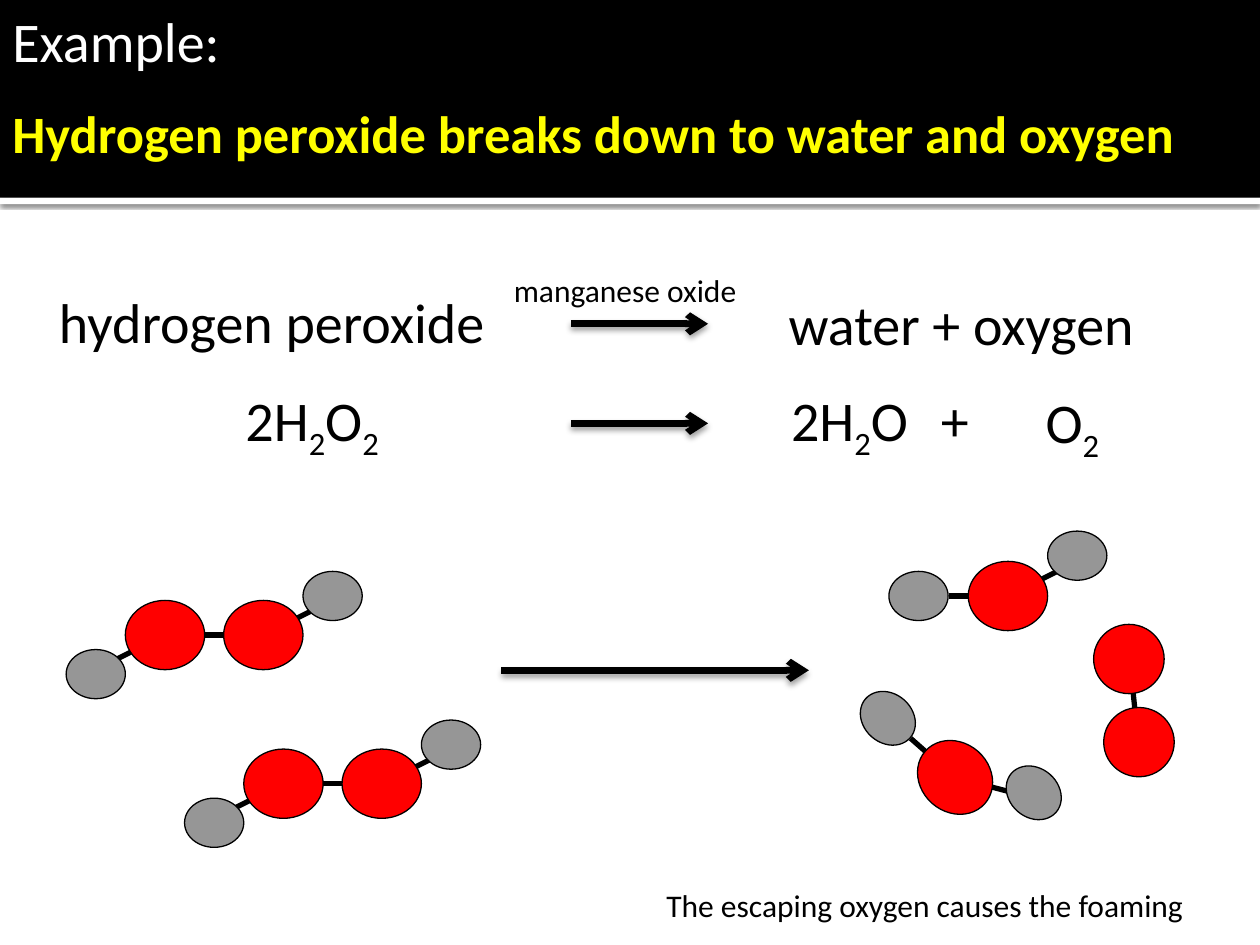
from math import cos, radians, sin

from lxml.etree import SubElement
from pptx import Presentation
from pptx.dml.color import RGBColor
from pptx.enum.shapes import MSO_CONNECTOR, MSO_SHAPE
from pptx.oxml.ns import qn
from pptx.util import Inches, Pt

COLORS = {
    "black": "000000",
    "white": "FFFFFF",
    "title": "FFFF00",
    "oxygen": "FF0000",
    "hydrogen": "969696",
}
ATOM_SIZES = {"oxygen": (0.63, 0.55), "hydrogen": (0.47, 0.39)}

# Atoms are (element, x, y) and bonds (x1, y1, x2, y2), in inches from the centre.
PEROXIDE = (
    [("oxygen", -0.39, 0), ("oxygen", 0.39, 0),
     ("hydrogen", 0.94, -0.31), ("hydrogen", -0.94, 0.31)],
    [(-0.08, 0, 0.08, 0), (0.63, -0.12, 0.79, -0.2), (-0.63, 0.12, -0.79, 0.2)],
)
WATER = (
    [("oxygen", 0, 0), ("hydrogen", -0.71, 0), ("hydrogen", 0.55, -0.32)],
    [(-0.47, 0, -0.31, 0), (0.24, -0.12, 0.4, -0.2)],
)
OXYGEN_GAS = (
    [("oxygen", 0.04, 0.33), ("oxygen", -0.04, -0.33)],
    [(-0.02, -0.19, 0.02, 0.19)],
)


def color(name):
    return RGBColor.from_string(COLORS[name])


def set_effects(shape, shadow=None):
    """Give a shape a downward shadow (alpha %, blur pt, distance pt), or none."""
    effects = SubElement(shape._element.spPr, qn("a:effectLst"))
    if shadow:
        alpha, blur, distance = shadow
        outer = SubElement(effects, qn("a:outerShdw"), blurRad=str(Pt(blur)),
                           dist=str(Pt(distance)), dir="5400000", rotWithShape="0")
        tint = SubElement(outer, qn("a:srgbClr"), val=COLORS["black"])
        SubElement(tint, qn("a:alpha"), val=str(alpha * 1000))


def add_line(shapes, start, end, width):
    ends = [Inches(value) for value in (*start, *end)]
    line = shapes.add_connector(MSO_CONNECTOR.STRAIGHT, *ends)
    line.line.color.rgb = color("black")
    line.line.width = Pt(width)
    return line


def add_arrow(page, left, top, length):
    arrow = add_line(page.shapes, (left, top), (left + length, top), 3.78)
    SubElement(arrow.line._get_or_add_ln(), qn("a:tailEnd"), type="arrow")
    set_effects(arrow, (38, 3.5, 2))


def add_text(page, text, box, size=32, tone="black", bold=False, wrap=False):
    """Add one line of text; a digit after an underscore is a subscript."""
    frame = page.shapes.add_textbox(*map(Inches, box)).text_frame
    frame.word_wrap = wrap
    para = frame.paragraphs[0]
    para.font.name = "Calibri"
    para.font.size = Pt(size)
    para.font.bold = bold
    para.font.color.rgb = color(tone)
    first, *rest = text.split("_")
    para.add_run().text = first
    for part in rest:
        span = para.add_run()
        span.text = part[0]
        span.font._element.set("baseline", "-25000")
        if part[1:]:
            para.add_run().text = part[1:]


def add_band(page, top, height, tone, shadow=None):
    band = page.shapes.add_shape(
        MSO_SHAPE.RECTANGLE, 0, Inches(top), Inches(10), Inches(height))
    band.fill.solid()
    band.fill.fore_color.rgb = color(tone)
    band.line.fill.background()
    set_effects(band, shadow)


def add_molecule(page, molecule, x, y, turn=0, oxygen_size=ATOM_SIZES["oxygen"]):
    """Draw a molecule centred on x, y and turned clockwise by some degrees."""
    atoms, bonds = molecule
    sizes = {**ATOM_SIZES, "oxygen": oxygen_size}
    cosine, sine = cos(radians(turn)), sin(radians(turn))

    def place(dx, dy):
        return x + dx * cosine - dy * sine, y + dx * sine + dy * cosine

    group = page.shapes.add_group_shape()
    for x1, y1, x2, y2 in bonds:
        set_effects(add_line(group.shapes, place(x1, y1), place(x2, y2), 3))
    for element, dx, dy in atoms:
        width, height = sizes[element]
        center_x, center_y = place(dx, dy)
        box = (center_x - width / 2, center_y - height / 2, width, height)
        atom = group.shapes.add_shape(MSO_SHAPE.OVAL, *map(Inches, box))
        atom.rotation = turn
        atom.fill.solid()
        atom.fill.fore_color.rgb = color(element)
        atom.line.color.rgb = color("black")
        atom.line.width = Pt(0.75)
        atom.shadow.inherit = False


def add_header(page):
    add_band(page, 1.57, 0.05, "white", (60, 2.5, 0.8))
    add_band(page, 0, 1.57, "black")
    add_text(page, "Example:", (0, 0, 10, 0.64), tone="white", wrap=True)
    add_text(page, "Hydrogen peroxide breaks down to water and oxygen",
             (0, 0.75, 9.96, 0.61), 30, "title", bold=True, wrap=True)


def add_equations(page, left, top):
    """Place the word equation above the symbol equation."""
    add_text(page, "hydrogen peroxide", (left, top - 0.02, 3.6, 0.63))
    add_text(page, "manganese oxide", (left + 3.61, top - 0.15, 2.17, 0.4), 18)
    add_text(page, "water + oxygen", (left + 5.79, top, 3.22, 0.63))
    symbols = [("2H_2O_2", 1.48, 1.44), ("2H_2O", 5.81, 1.28), ("+", 7, 0.46)]
    for text, offset, width in symbols:
        add_text(page, text, (left + offset, top + 0.76, width, 0.63))
    add_text(page, "O_2", (left + 7.83, top + 0.78, 0.71, 0.63))
    for offset in (0.32, 1.11):
        add_arrow(page, left + 4.16, top + offset, 1.09)


def add_reaction(page):
    add_molecule(page, PEROXIDE, 1.7, 5.04)
    add_molecule(page, PEROXIDE, 2.64, 6.22)
    add_arrow(page, 3.98, 5.32, 2.44)
    add_molecule(page, WATER, 8, 4.73)
    add_molecule(page, WATER, 7.58, 6.17, turn=41.3)
    add_molecule(page, OXYGEN_GAS, 9, 5.56, oxygen_size=(0.56, 0.55))
    add_text(page, "The escaping oxygen causes the foaming", (5.19, 6.98, 4.81, 0.4), 18)


def main():
    deck = Presentation()
    deck.slide_width, deck.slide_height = Inches(10), Inches(7.5)
    page = deck.slides.add_slide(deck.slide_layouts[6])
    add_header(page)
    add_equations(page, 0.37, 2.25)
    add_reaction(page)
    deck.save("out.pptx")


if __name__ == "__main__":
    main()
